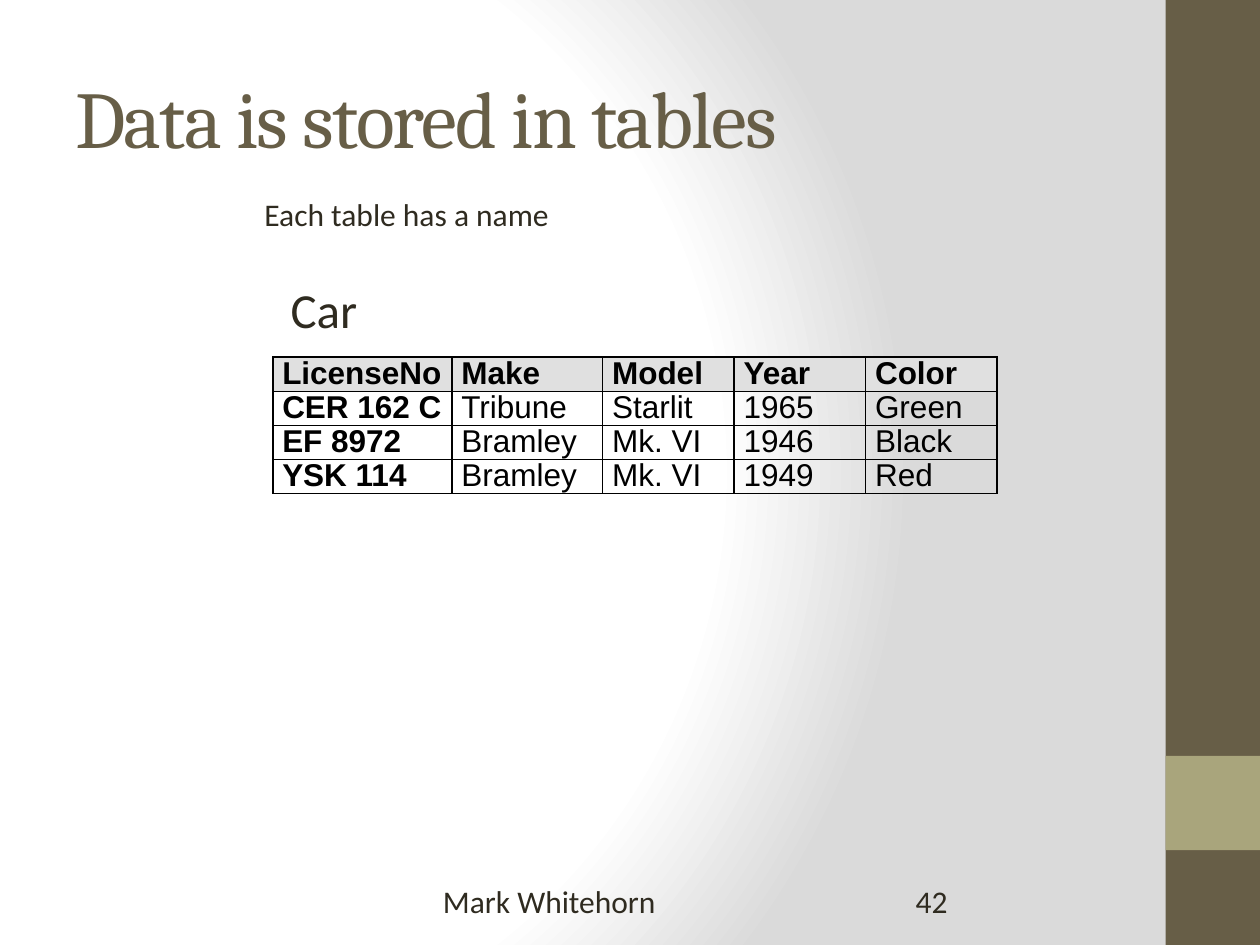
from lxml import etree
from pptx import Presentation
from pptx.dml.color import RGBColor
from pptx.enum.shapes import MSO_SHAPE
from pptx.enum.text import MSO_ANCHOR
from pptx.oxml import parse_xml
from pptx.oxml.ns import nsdecls, qn
from pptx.util import Cm, Pt

RECTANGLE = MSO_SHAPE.RECTANGLE
MIDDLE, BOTTOM = MSO_ANCHOR.MIDDLE, MSO_ANCHOR.BOTTOM
BROWN, OLIVE, INK, BLACK = "675E47", "A9A57C", "2F2B20", "000000"
HEADER_GREY, WHITE, EDGE_GREY = "E0E0E0", "FFFFFF", "DADADA"

CARS = [
    ["LicenseNo", "Make", "Model", "Year", "Color"],
    ["CER 162 C", "Tribune", "Starlit", "1965", "Green"],
    ["EF 8972", "Bramley", "Mk. VI", "1946", "Black"],
    ["YSK 114", "Bramley", "Mk. VI", "1949", "Red"],
]
COLUMN_WIDTHS = [3.61, 3.04, 2.65, 2.65, 2.65]


def color(hex_string):
    """Turn a hex string into a colour."""
    return RGBColor.from_string(hex_string)


def style(run, size, face="Calibri", shade=INK, bold=False):
    """Format one run."""
    run.font.size = Pt(size)
    run.font.name = face
    run.font.bold = bold
    run.font.color.rgb = color(shade)


def add_label(slide, box, words, size, face="Calibri", shade=INK, wrap=True):
    """Place a one-paragraph text in a box and return its shape."""
    label = slide.shapes.add_textbox(*map(Cm, box))
    label.text_frame.word_wrap = wrap
    label.text_frame.text = words
    style(label.text_frame.paragraphs[0].runs[0], size, face, shade)
    return label


def paint_background(slide):
    """Fill the background with a radial gradient from white to grey."""
    slide.background.fill.gradient()
    linear = next(slide.element.iter(qn("a:gradFill")))
    stops = "".join(
        f'<a:gs pos="{percent * 1000}"><a:srgbClr val="{shade}"/></a:gs>'
        for percent, shade in [(0, WHITE), (75, WHITE), (100, EDGE_GREY)]
    )
    radial = parse_xml(
        f'<a:gradFill {nsdecls("a")} rotWithShape="1"><a:gsLst>{stops}</a:gsLst>'
        '<a:path path="circle"><a:fillToRect l="20000" t="50000" r="100000" b="50000"/>'
        "</a:path></a:gradFill>"
    )
    linear.getparent().replace(linear, radial)


def add_sidebar(slide, left, top, width, height):
    """Draw the side band with its square accent."""
    band = (left, top, width, height, BROWN)
    accent = (left, top + 0.8 * height, width, width, OLIVE)
    for *box, shade in (band, accent):
        panel = slide.shapes.add_shape(RECTANGLE, *map(Cm, box))
        panel.shadow.inherit = False
        panel.fill.solid()
        panel.fill.fore_color.rgb = color(shade)
        panel.line.fill.background()


def add_heading(slide, left, top, width, height):
    """Place the slide title and the remark under it."""
    title = add_label(
        slide, (left, top, width, height), "Data is stored in tables", 46, "Cambria", BROWN
    )
    title.text_frame.vertical_anchor = MIDDLE
    title.text_frame.paragraphs[0].runs[0].font._element.set("spc", "-100")
    remark_box = (left + 3.81, top + 3.05, 7.06, 1.02)
    add_label(slide, remark_box, "Each table has a name", 18, wrap=False)


def add_borders(cell):
    """Give a cell thin black lines on all four sides."""
    properties = cell._tc.get_or_add_tcPr()
    for position, side in enumerate(("a:lnL", "a:lnR", "a:lnT", "a:lnB")):
        line = etree.Element(qn(side), w=str(Pt(1)))
        fill = etree.SubElement(line, qn("a:solidFill"))
        etree.SubElement(fill, qn("a:srgbClr"), val=BLACK)
        properties.insert(position, line)


def add_car_table(slide, left, top, width, height):
    """Draw the table of cars with its name above it."""
    table = slide.shapes.add_table(
        len(CARS), len(CARS[0]), Cm(left), Cm(top), Cm(width), Cm(height)
    ).table
    table.first_row = table.horz_banding = False
    for column, column_width in zip(table.columns, COLUMN_WIDTHS):
        column.width = Cm(column_width)
    for row_index, car in enumerate(CARS):
        table.rows[row_index].height = Cm(height / len(CARS))
        for column_index, words in enumerate(car):
            cell = table.cell(row_index, column_index)
            cell.margin_left = cell.margin_right = Cm(0.19)
            cell.margin_top = cell.margin_bottom = 0
            cell.vertical_anchor = BOTTOM
            if row_index == 0:
                cell.fill.solid()
                cell.fill.fore_color.rgb = color(HEADER_GREY)
            else:
                cell.fill.background()
            add_borders(cell)
            cell.text_frame.text = words
            paragraph = cell.text_frame.paragraphs[0]
            paragraph.line_spacing = Pt(12)
            style(paragraph.runs[0], 18, "Arial", BLACK, row_index == 0 or column_index == 0)

    name = add_label(slide, (left - 0.21, top - 1.69, 2.96, 1.9), "Car", 28)
    paragraph = name.text_frame.paragraphs[0]
    paragraph.space_before = Pt(5.6)
    indents = paragraph._p.get_or_add_pPr()
    indents.set("marL", str(Cm(0.95)))
    indents.set("indent", str(Cm(-0.63)))


def add_footer(slide, left, top, width, height):
    """Place the author at the left and the slide number at the right."""
    number_width = 5.92
    add_label(slide, (left, top, 8.05, height), "Mark Whitehorn", 18)
    add_label(slide, (left + width - number_width, top, number_width, height), "42", 18)


def main():
    """Build the slide and save it."""
    deck = Presentation()
    deck.slide_width, deck.slide_height = Cm(25.4), Cm(19.05)
    slide = deck.slides.add_slide(deck.slide_layouts[6])
    paint_background(slide)
    add_sidebar(slide, 23.5, 0, 1.9, 19.05)
    add_heading(slide, 1.27, 0.76, 21.17, 3.18)
    add_footer(slide, 8.68, 17.65, 15.45, 1.02)
    add_car_table(slide, 5.5, 7.2, 14.6, 2.75)
    deck.save("out.pptx")


if __name__ == "__main__":
    main()
